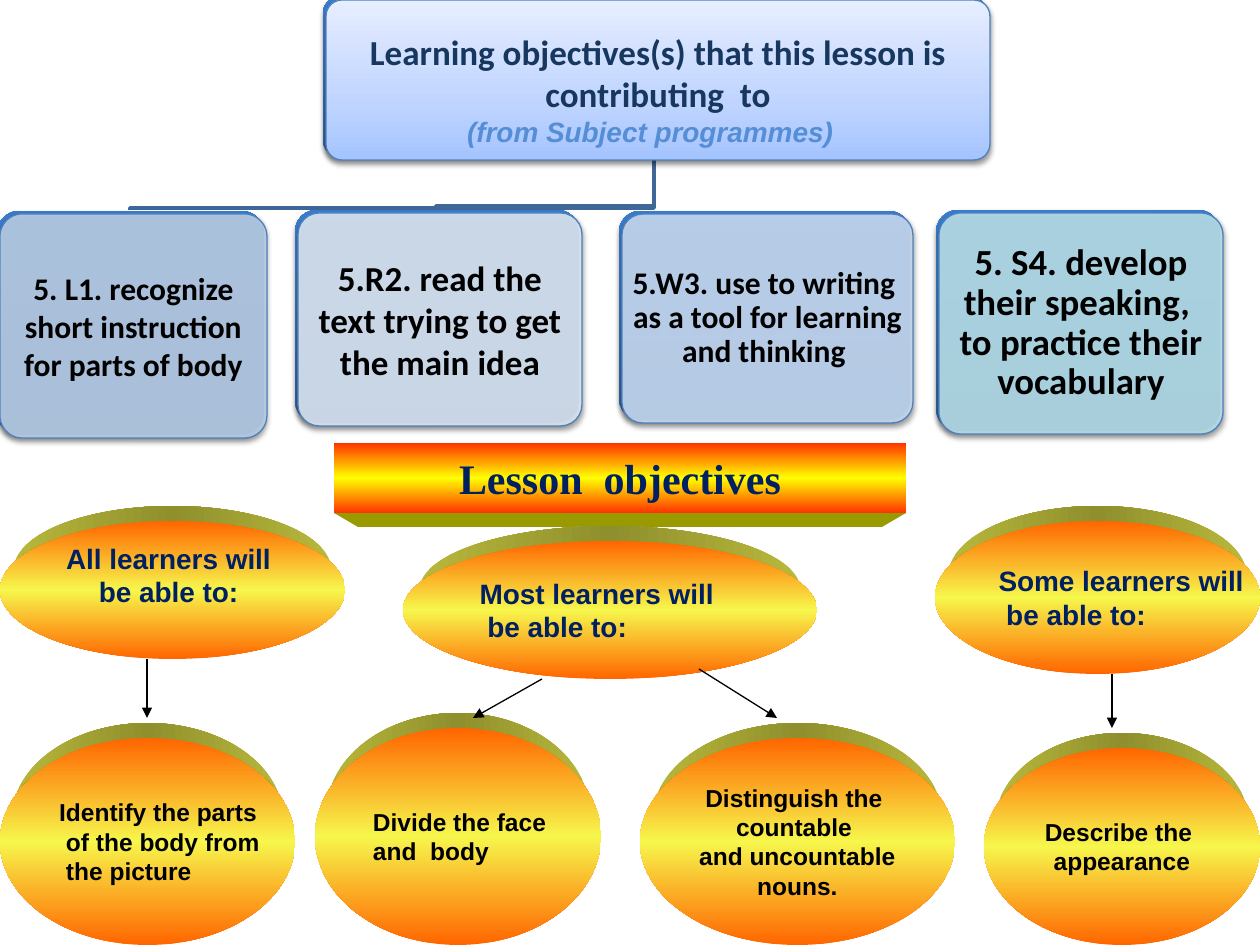
from dataclasses import dataclass
from lxml.etree import SubElement as Sub
from pptx import Presentation
from pptx.dml.color import RGBColor as Rgb
from pptx.enum.shapes import MSO_CONNECTOR as Link, MSO_SHAPE as Kind
from pptx.enum.text import MSO_ANCHOR as Anchor, PP_ALIGN as Align
from pptx.oxml.ns import qn
from pptx.util import Emu, Pt

UNIT = 914400 / 126


@dataclass(frozen=True)
class Theme:
    """Colours, gradients, fonts and type sizes of the slide."""
    sans: str = "Arial"
    body: str = "Calibri"
    serif: str = "Times New Roman"
    black: str = "000000"
    navy: str = "002060"
    title: str = "17375E"
    note: str = "558ED5"
    edge: str = "4F81BD"
    wire: str = "3F6797"
    olive: str = "999900"
    back: tuple = ((0, "2F5F99"), (80, "3D7CC7"), (100, "3A7CCB"))
    head: tuple = ((0, "A4C4FF"), (35, "BFD4FF"), (100, "E6EEFF"))
    fire: tuple = ((0, "FF3300"), (50, "FFFF00"), (100, "FF3300"))
    glow: tuple = ((0, "FF6600"), (50, "F6F64C"), (100, "FF6600"))
    rim: tuple = ((0, "B8B83C"), (50, "8F8F2D"), (100, "B8B83C"))
    big: int = 24
    top: int = 20
    mid: int = 16
    small: int = 14


LOOK = Theme()


def px(num):
    """Turn px into EMU."""
    return Emu(round(num * UNIT))


def shade(shape, stops, turn):
    """Fill a shape with a linear gradient."""
    shape.fill.gradient()
    grad = shape._element.spPr.find(qn("a:gradFill"))
    rows = grad.find(qn("a:gsLst"))
    for old in list(rows):
        rows.remove(old)
    for place, tone in stops:
        stop = Sub(rows, qn("a:gs"), pos=str(place * 1000))
        Sub(stop, qn("a:srgbClr"), val=tone)
    grad.find(qn("a:lin")).set("ang", str(turn * 60000))


def drop(shape):
    """Give a shape a soft shadow straight below."""
    shape.shadow.inherit = False
    list_ = shape._element.spPr.find(qn("a:effectLst"))
    soft = Sub(list_, qn("a:outerShdw"), blurRad="39370", dist="22860",
               dir="5400000", rotWithShape="0")
    tone = Sub(soft, qn("a:srgbClr"), val=LOOK.black)
    Sub(tone, qn("a:alpha"), val="35000")


def add(slide, kind, box):
    """Place a preset shape without line or shadow."""
    shape = slide.shapes.add_shape(kind, *map(px, box))
    shape.shadow.inherit = False
    shape.line.fill.background()
    return shape


def write(shape, lines, font, size, tone, pads, align=Align.CENTER, wrap=True):
    """Set the lines of a shape in one bold style."""
    frame = shape.text_frame
    frame.text = "\n".join(lines)
    frame.word_wrap = wrap
    frame.vertical_anchor = Anchor.MIDDLE
    (frame.margin_left, frame.margin_top,
     frame.margin_right, frame.margin_bottom) = map(px, pads)
    for para in frame.paragraphs:
        para.alignment = align
        for run in para.runs:
            run.font.name, run.font.size, run.font.bold = font, Pt(size), True
            run.font.color.rgb = Rgb.from_string(tone)
    return frame


def panel(slide, box):
    """Draw a rounded panel over its blue back and return the panel."""
    left, top, wide, high = box
    for step in (-3, 0):
        shape = add(slide, Kind.ROUNDED_RECTANGLE,
                    (left + step, top + step, wide, high))
        shape.adjustments[0] = 0.1
        drop(shape)
        if step:
            shade(shape, LOOK.back, 270)
    shape.line.color.rgb = Rgb.from_string(LOOK.edge)
    shape.line.width = Pt(0.75)
    return shape


def header(slide, box):
    """Draw the top panel with its title and note."""
    shape = panel(slide, box)
    shade(shape, LOOK.head, 270)
    lines = ("Learning objectives(s) that this lesson is contributing  to",
             "(from Subject programmes)  ")
    frame = write(shape, lines, LOOK.body, LOOK.top, LOOK.title, (6, 26, 6, 6))
    frame.vertical_anchor = Anchor.TOP
    font = frame.paragraphs[1].runs[0].font
    font.name, font.size, font.italic = LOOK.sans, Pt(LOOK.mid), True
    font.color.rgb = Rgb.from_string(LOOK.note)


def card(slide, box, text, size, tone, gap):
    """Draw one objective card."""
    shape = panel(slide, box)
    shape.fill.solid()
    shape.fill.fore_color.rgb = Rgb.from_string(tone)
    clear = shape._element.spPr.find(qn("a:solidFill"))[0]
    Sub(clear, qn("a:alpha"), val="90000")
    frame = write(shape, [text], LOOK.body, size, LOOK.black, (4,) * 4)
    frame.paragraphs[0].line_spacing = gap


def trace(slide, points, close=False):
    """Draw an outline through points."""
    pen = slide.shapes.build_freeform(*points[0], scale=UNIT)
    pen.add_line_segments(points[1:], close=close)
    shape = pen.convert_to_shape()
    shape.shadow.inherit = False
    return shape


def branch(slide, start, end, turn):
    """Draw an elbow line from the header down to a card."""
    (left, top), (right, low) = start, end
    shape = trace(slide, [start, (left, turn), (right, turn), (right, low)])
    shape.fill.background()
    shape.line.color.rgb = Rgb.from_string(LOOK.wire)
    shape.line.width = Pt(2)


def banner(slide, box):
    """Draw the banner with its slanted lower side."""
    left, top, wide, high = box
    right, low = left + wide, top + high
    side = trace(slide, [(left, low), (right, low), (right - 24, low + 14),
                         (left + 24, low + 14)], True)
    side.fill.solid()
    side.fill.fore_color.rgb = Rgb.from_string(LOOK.olive)
    side.line.fill.background()
    shape = add(slide, Kind.RECTANGLE, box)
    shade(shape, LOOK.fire, 90)
    write(shape, ["Lesson  objectives"], LOOK.serif, LOOK.big, LOOK.navy,
          (13, 6, 13, 6), wrap=False)


def oval(slide, box, lines, size, tone, align, foot=8):
    """Draw a glowing oval with an olive rim behind its top."""
    left, top, wide, high = box
    rim = add(slide, Kind.OVAL, (left + wide * 0.04, top - 15,
                                 wide * 0.92, high * 0.92))
    shade(rim, LOOK.rim, 0)
    shape = add(slide, Kind.OVAL, box)
    shade(shape, LOOK.glow, 90)
    write(shape, lines, LOOK.sans, size, tone, (16, 8, 16, foot), align, False)


def arrow(slide, start, end):
    """Draw a thin black arrow."""
    line = slide.shapes.add_connector(Link.STRAIGHT, *map(px, start + end))
    line.line.color.rgb = Rgb.from_string(LOOK.black)
    line.line.width = Pt(0.75)
    Sub(line.line._get_or_add_ln(), qn("a:tailEnd"), type="triangle")
    Sub(line._element.spPr, qn("a:effectLst"))


def main():
    """Build the slide and save it."""
    deck = Presentation()
    deck.slide_width, deck.slide_height = px(1260), px(945)
    slide = deck.slides.add_slide(deck.slide_layouts[6])
    branch(slide, (654, 156), (436, 209), 206)
    branch(slide, (654, 156), (130, 210), 208)
    header(slide, (326, 0, 664, 160))
    for item in (
        ((0, 214, 267, 224), "5. L1. recognize short instruction for parts of body",
         18, "B9CDE5", 1.0),
        ((298, 213, 284, 213), "5.R2. read the text trying to get the main idea",
         20, "DCE6F2", 1.0),
        ((622, 214, 291, 209),
         "5.W3. use to writing  as a tool for learning and thinking ",
         18, "C6D9F1", 0.9),
        ((939, 213, 284, 221),
         "5. S4. develop their speaking,  to practice their vocabulary",
         21, "B7DEE8", 0.9),
    ):
        card(slide, *item)
    banner(slide, (334, 443, 572, 70))
    goal, task = (LOOK.mid, LOOK.navy), (LOOK.small, LOOK.black)
    able = " be able to:"
    for box, lines, style, align, foot in (
        ((403, 541, 414, 138), ("Most learners will", able), goal, Align.LEFT, 8),
        ((315, 728, 286, 217), ("Divide the face", "and  body"), task, Align.LEFT, 8),
        ((640, 738, 315, 207), ("Distinguish the ", "countable ",
                                "and uncountable", "nouns."), task, Align.CENTER, 8),
        ((0, 521, 345, 138), ("All learners will ", "be able to: "),
         goal, Align.CENTER, 38),
        ((0, 738, 295, 207), ("Identify the parts", " of the body from",
                              " the picture"), task, Align.LEFT, 8),
        ((935, 521, 325, 153), ("Some learners will", able), goal, Align.LEFT, 8),
        ((984, 748, 276, 197), ("Describe the ", "appearance"),
         task, Align.CENTER, 8),
    ):
        oval(slide, box, lines, *style, align, foot)
    for start, end in (((147, 659), (147, 718)), ((542, 679), (473, 718)),
                       ((699, 669), (777, 718)), ((1112, 674), (1112, 728))):
        arrow(slide, start, end)
    deck.save("out.pptx")


if __name__ == "__main__":
    main()
